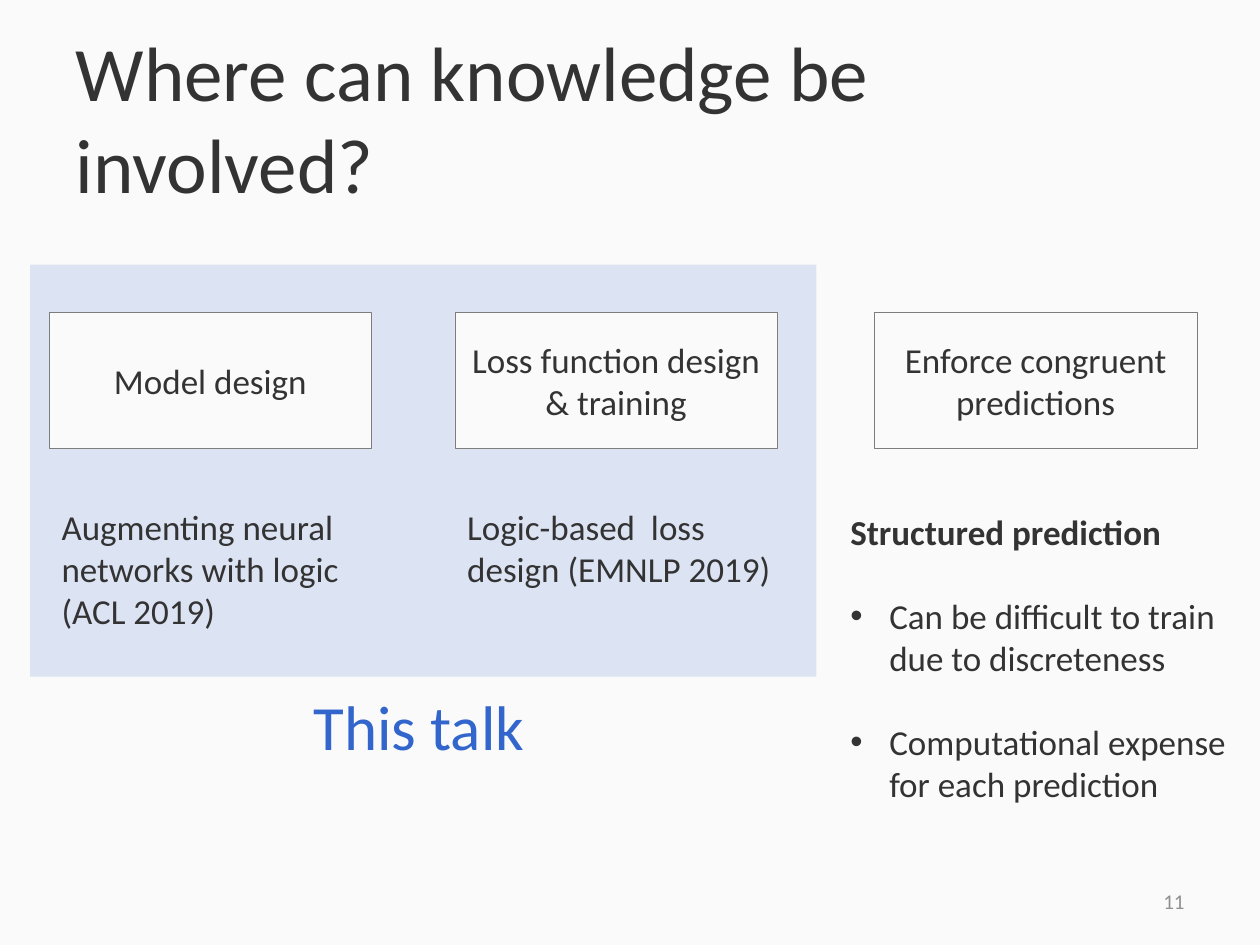
from pptx import Presentation
from pptx.dml.color import RGBColor
from pptx.enum import shapes, text
from pptx.oxml.ns import qn
from pptx.util import Inches, Pt
from lxml import etree

# Content
TITLE = "Where can knowledge be involved?"
STAGES = [  # left edge, stage name
    (0.39, "Model design"),
    (3.61, "Loss function design & training"),
    (6.94, "Enforce congruent predictions"),
]
PAPERS = [  # width, height, description; each sits under its stage
    (2.4, 1.11, "Augmenting neural networks with logic (ACL 2019)"),
    (2.87, 0.77, "Logic-based  loss design (EMNLP 2019)"),
]
PREDICTION_HEADING = "Structured prediction"
PREDICTION_ISSUES = [
    "Can be difficult to train due to discreteness",
    "Computational expense for each prediction",
]
SCOPE_LABEL = "This talk"
SLIDE_NUMBER = "11"

THEME = {
    "font": "Calibri",
    "background": "FAFAFA", "ink": "333333", "accent": "3366CC",
    "outline": "7D7D7D", "muted": "909090",
    "title": 44, "label": 36, "body": 20, "number": 12,
}


def color(name):
    return RGBColor.from_string(THEME[name])


def style(paragraph, size="body", ink="ink", bold=False, align=text.PP_ALIGN.LEFT):
    paragraph.alignment = align
    font = paragraph.font
    font.name, font.size, font.bold = THEME["font"], Pt(THEME[size]), bold
    font.color.rgb = color(ink)


def add_text(slide, box, words, wrap=True, anchor=text.MSO_ANCHOR.TOP, **look):
    frame = slide.shapes.add_textbox(*map(Inches, box)).text_frame
    frame.word_wrap = wrap
    frame.vertical_anchor = anchor
    frame.text = words
    style(frame.paragraphs[0], **look)
    return frame


def add_rectangle(slide, box, fill):
    rectangle = slide.shapes.add_shape(shapes.MSO_SHAPE.RECTANGLE, *map(Inches, box))
    rectangle.shadow.inherit = False
    rectangle.fill.solid()
    rectangle.fill.fore_color.rgb = color(fill)
    return rectangle


def add_bullet(paragraph, indent=0.31):
    properties = paragraph._p.get_or_add_pPr()
    properties.set("marL", str(Inches(indent)))
    properties.set("indent", str(-Inches(indent)))
    etree.SubElement(properties, qn("a:buFont")).set("typeface", "Arial")
    etree.SubElement(properties, qn("a:buChar")).set("char", "•")


def main():
    deck = Presentation()
    deck.slide_width, deck.slide_height = Inches(10), Inches(7.5)
    slide = deck.slides.add_slide(deck.slide_layouts[5])
    slide.background.fill.solid()
    slide.background.fill.fore_color.rgb = color("background")

    # Title
    title = slide.shapes.title
    title.left, title.top, title.width, title.height = map(Inches, (0.5, 0.3, 9, 1.25))
    title.text_frame.text = TITLE
    title.text_frame.auto_size = text.MSO_AUTO_SIZE.NONE
    title.text_frame.vertical_anchor = text.MSO_ANCHOR.MIDDLE
    style(title.text_frame.paragraphs[0], "title")

    # Translucent panel around the stages covered by the talk
    scope = add_rectangle(slide, (0.24, 2.1, 6.24, 3.27), "accent")
    scope.line.fill.background()
    tint = scope.fill._xPr.find(qn("a:solidFill"))[0]
    etree.SubElement(tint, qn("a:alpha")).set("val", "15000")
    add_text(slide, (2.39, 5.41, 1.94, 0.71), SCOPE_LABEL, wrap=False,
             size="label", ink="accent")

    # Stage boxes
    for left, name in STAGES:
        stage = add_rectangle(slide, (left, 2.48, 2.56, 1.08), "background")
        stage.line.color.rgb = color("outline")
        stage.line.width = Pt(0.25)
        stage.text_frame.vertical_anchor = text.MSO_ANCHOR.MIDDLE
        stage.text_frame.text = name
        style(stage.text_frame.paragraphs[0], align=text.PP_ALIGN.CENTER)

    # Papers under the first two stages
    for (left, _), (width, height, description) in zip(STAGES, PAPERS):
        add_text(slide, (left, 3.96, width, height), description)

    # Notes on structured prediction
    prediction = add_text(slide, (6.65, 4, 3.36, 2.46), PREDICTION_HEADING, bold=True)
    for issue in PREDICTION_ISSUES:
        paragraph = prediction.add_paragraph()
        paragraph.text = issue
        paragraph.space_before = Pt(24)
        style(paragraph)
        add_bullet(paragraph)

    # Slide number
    add_text(slide, (7.17, 6.95, 2.33, 0.4), SLIDE_NUMBER, anchor=text.MSO_ANCHOR.MIDDLE,
             size="number", ink="muted", align=text.PP_ALIGN.RIGHT)

    deck.save("out.pptx")


if __name__ == "__main__":
    main()
